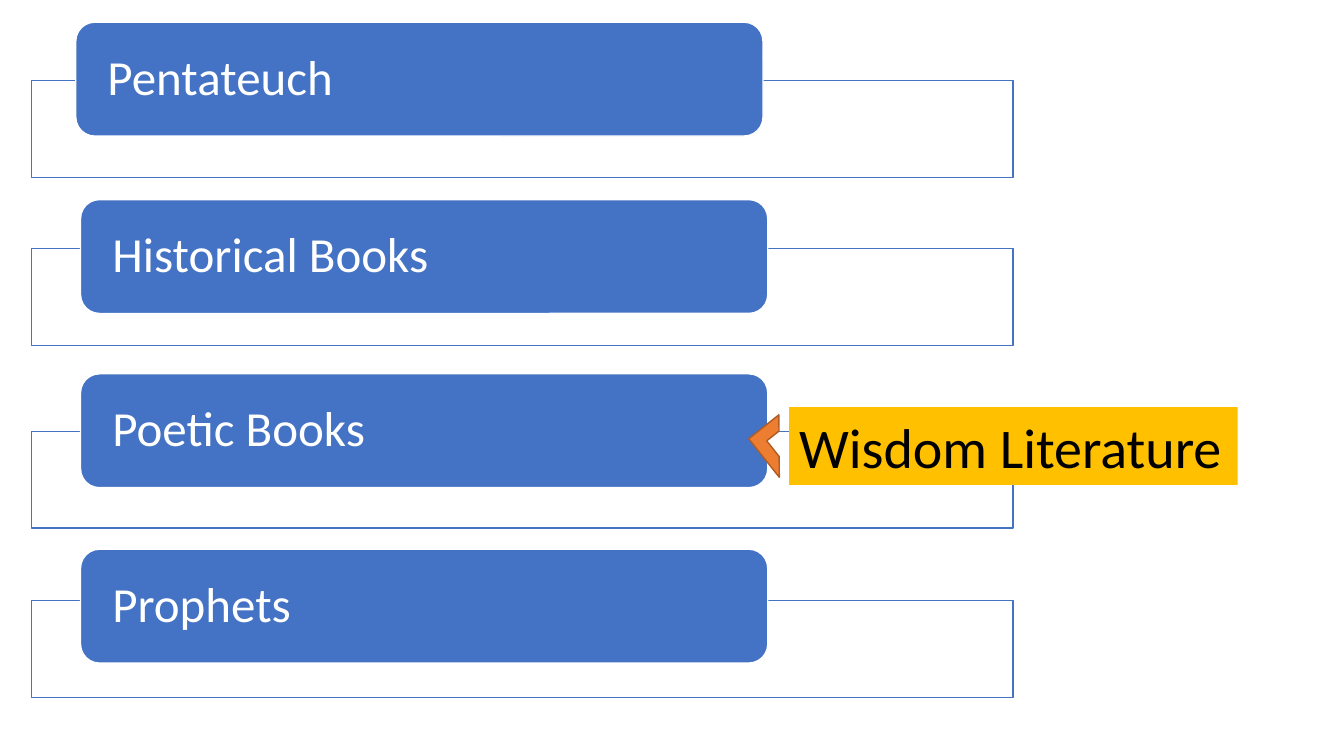
from dataclasses import dataclass

from lxml.etree import SubElement
from pptx import Presentation
from pptx.dml.color import RGBColor
from pptx.enum.shapes import MSO_SHAPE as Preset
from pptx.enum.text import MSO_ANCHOR as Anchor, MSO_AUTO_SIZE as AutoSize, PP_ALIGN as Align
from pptx.oxml.ns import qn
from pptx.shapes.autoshape import Shape
from pptx.slide import Slide
from pptx.util import Cm, Pt

COLORS = {
    "white": "FFFFFF",
    "black": "000000",
    "blue": "4472C4",
    "gold": "FFC000",
    "orange": "ED7D31",
    "rust": "AF5C24",
}
FONT = "Calibri"

# Shared measures of the sections, in centimetres
PANEL_LEFT, PANEL_WIDTH, PANEL_HEIGHT = 0.79, 24.74, 2.44
BAR_WIDTH, BAR_HEIGHT = 17.32, 2.87
BAR_INSET = 0.66


@dataclass(frozen=True)
class Section:
    title: str
    panel_top: float
    bar_top: float
    bar_left: float = 2.03


SECTIONS = [
    Section("Pentateuch", 2.03, 0.56, bar_left=1.91),
    Section("Historical Books", 6.27, 5.03),
    Section("Poetic Books", 10.87, 9.42),
    Section("Prophets", 15.14, 13.84),
]


def rgb(name: str) -> RGBColor:
    return RGBColor.from_string(COLORS[name])


def add_block(slide: Slide, preset: Preset, left: float, top: float, width: float,
              height: float, fill: str, line: str | None = None) -> Shape:
    block = slide.shapes.add_shape(preset, Cm(left), Cm(top), Cm(width), Cm(height))
    block.shadow.inherit = False
    block.fill.solid()
    block.fill.fore_color.rgb = rgb(fill)
    if line:
        block.line.color.rgb = rgb(line)
        block.line.width = Pt(1)
    else:
        block.line.fill.background()
    return block


def set_opacity(block: Shape, percent: int) -> None:
    color = block.element.spPr.find(qn("a:solidFill"))[0]
    SubElement(color, qn("a:alpha"), val=str(percent * 1000))


def write(block: Shape, text: str, *, size: float, color: str,
          anchor: Anchor = Anchor.TOP, line_spacing: float = 1.0) -> None:
    frame = block.text_frame
    frame.word_wrap = True
    frame.vertical_anchor = anchor
    paragraph = frame.paragraphs[0]
    paragraph.alignment = Align.LEFT
    paragraph.line_spacing = line_spacing
    run = paragraph.add_run()
    run.text = text
    run.font.name = FONT
    run.font.size = Pt(size)
    run.font.color.rgb = rgb(color)


def add_section(slide: Slide, section: Section) -> None:
    panel = add_block(slide, Preset.RECTANGLE, PANEL_LEFT, section.panel_top,
                      PANEL_WIDTH, PANEL_HEIGHT, "white", "blue")
    set_opacity(panel, 90)
    bar = add_block(slide, Preset.ROUNDED_RECTANGLE, section.bar_left, section.bar_top,
                    BAR_WIDTH, BAR_HEIGHT, "blue", "white")
    write(bar, section.title, size=35, color="white", anchor=Anchor.MIDDLE, line_spacing=0.9)
    frame = bar.text_frame
    frame.margin_left = frame.margin_right = Cm(BAR_INSET)
    frame.margin_top = frame.margin_bottom = 0


def main() -> None:
    deck = Presentation()
    deck.slide_width, deck.slide_height = Cm(33.87), Cm(19.05)
    slide = deck.slides.add_slide(deck.slide_layouts[6])

    # Sections
    for section in SECTIONS:
        add_section(slide, section)

    # Wisdom literature label and its pointer to the poetic books
    wisdom = add_block(slide, Preset.RECTANGLE, 19.89, 10.26, 11.3, 1.96, "gold")
    write(wisdom, "Wisdom Literature", size=40, color="black")
    wisdom.text_frame.auto_size = AutoSize.SHAPE_TO_FIT_TEXT
    pointer = add_block(slide, Preset.HALF_FRAME, 19.15, 10.62, 0.97, 1.24, "orange", "rust")
    pointer.rotation = 321.5

    deck.save("out.pptx")


if __name__ == "__main__":
    main()
